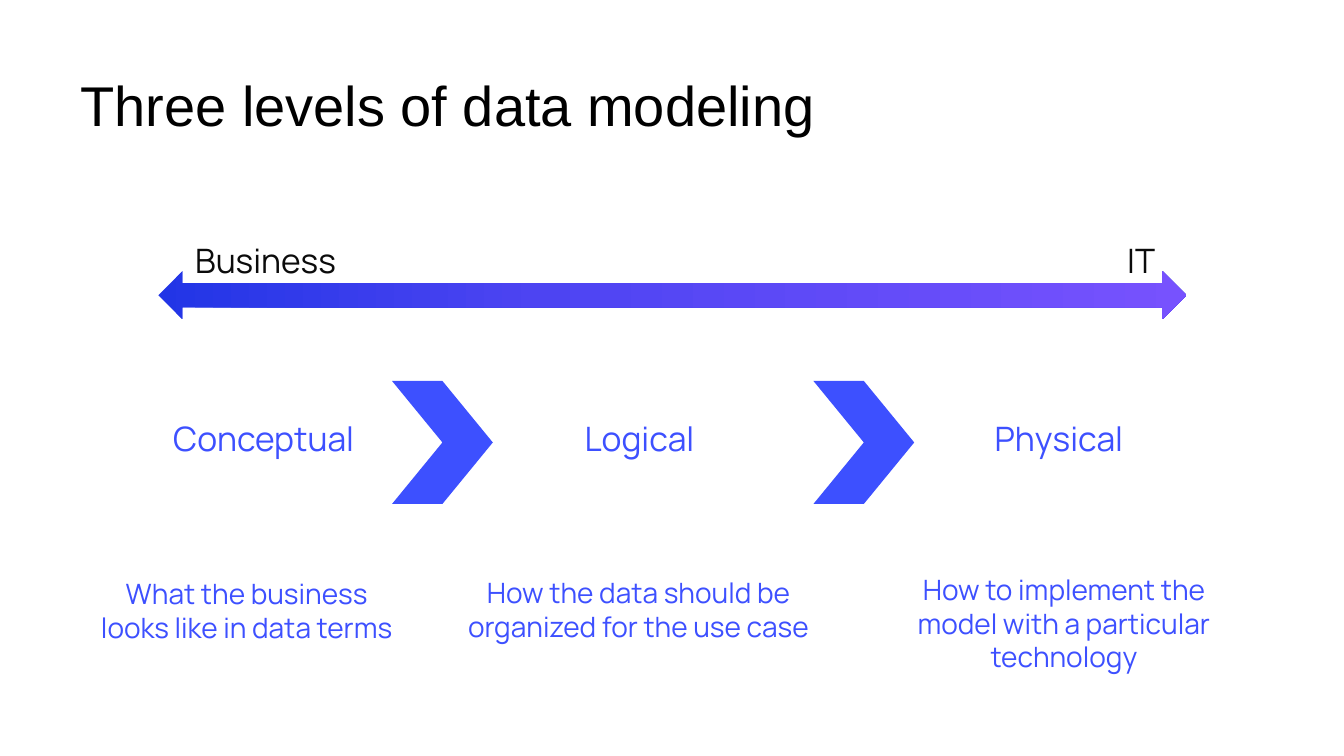
import copy
import pptx
import pptx.util
import pptx.dml.color
import pptx.enum.shapes
import pptx.enum.text
import pptx.oxml.ns

Cm = pptx.util.Cm
Pt = pptx.util.Pt
Align = pptx.enum.text.PP_ALIGN
Fit = pptx.enum.text.MSO_AUTO_SIZE
Form = pptx.enum.shapes.MSO_SHAPE

TITLE = "Three levels of data modeling"
ENDS = [
    ("Business", 4.67, 4.6, Align.LEFT),
    ("IT", 25.17, 4.19, Align.RIGHT),
]
LEVELS = [
    ("Conceptual", 3.71, "What the business looks like in data terms", (2.13, 14.4, 8.18)),
    ("Logical", 13.18, "How the data should be organized for the use case", (11.51, 14.38, 9.17)),
    ("Physical", 23.75, "How to implement the model with a particular technology", (22.23, 14.3, 9.17)),
]
STEPS = [9.88, 20.5]
SPAN = (3.99, 6.83, 25.91, 1.22)
THEME = {
    "title": {"name": "Arial", "size": Pt(40), "color": "000000"},
    "end": {"name": "Manrope", "size": Pt(24), "color": "0B0B0B"},
    "level": {"name": "Manrope", "size": Pt(24), "color": "3D50FF"},
    "note": {"name": "Manrope", "size": Pt(20), "color": "3D50FF"},
    "step": "3D50FF",
    "fade": [(0, "2235E6"), (0.37, "4D44F2"), (1, "7752FE")],
}


def tint(code):
    return pptx.dml.color.RGBColor.from_string(code)


def apply(item, values):
    for key, value in values.items():
        setattr(item, key, value)


def write(shape, text, role, align, **frame):
    body = shape.text_frame
    apply(body, {"word_wrap": True, **frame})
    body.text = text
    para = body.paragraphs[0]
    para.alignment = align
    font = para.runs[0].font
    look = dict(THEME[role])
    font.color.rgb = tint(look.pop("color"))
    apply(font, look)
    return para


def label(slide, text, box, role, align):
    shape = slide.shapes.add_textbox(*map(Cm, box))
    write(shape, text, role, align, auto_size=Fit.SHAPE_TO_FIT_TEXT)


def draw(slide, form, box):
    shape = slide.shapes.add_shape(form, *map(Cm, box))
    shape.shadow.inherit = False
    shape.line.fill.background()
    return shape


def fade(shape):
    fill = shape.fill
    fill.gradient()
    fill.gradient_angle = 0
    first = next(shape.element.iter(pptx.oxml.ns.qn("a:gs")))
    first.addnext(copy.deepcopy(first))
    for stop, (place, code) in zip(fill.gradient_stops, THEME["fade"]):
        stop.position = place
        stop.color.rgb = tint(code)


def main():
    """Build the slide on the three levels of data modeling."""
    deck = pptx.Presentation()
    apply(deck, {"slide_width": Cm(33.87), "slide_height": Cm(19.05)})
    slide = deck.slides.add_slide(deck.slide_layouts[5])

    title = slide.shapes.title
    sides = ("left", "top", "width", "height")
    apply(title, dict(zip(sides, map(Cm, (1.7, 0.76, 29.72, 3.96)))))
    pads = {f"margin_{side}": Cm(0.33) for side in ("left", "top", "right", "bottom")}
    para = write(title, TITLE, "title", Align.LEFT, auto_size=Fit.NONE,
                 vertical_anchor=pptx.enum.text.MSO_ANCHOR.MIDDLE, **pads)
    para.line_spacing = 0.9

    fade(draw(slide, Form.LEFT_RIGHT_ARROW, SPAN))
    for text, left, width, align in ENDS:
        label(slide, text, (left, 5.92, width, 1.27), "end", align)

    for left in STEPS:
        step = draw(slide, Form.CHEVRON, (left, 9.6, 2.54, 3.1))
        step.fill.solid()
        step.fill.fore_color.rgb = tint(THEME["step"])

    for name, left, note, box in LEVELS:
        label(slide, name, (left, 10.41, 5.87, 1.27), "level", Align.CENTER)
        label(slide, note, (*box, 2.82), "note", Align.CENTER)

    deck.save("out.pptx")


if __name__ == "__main__":
    main()
